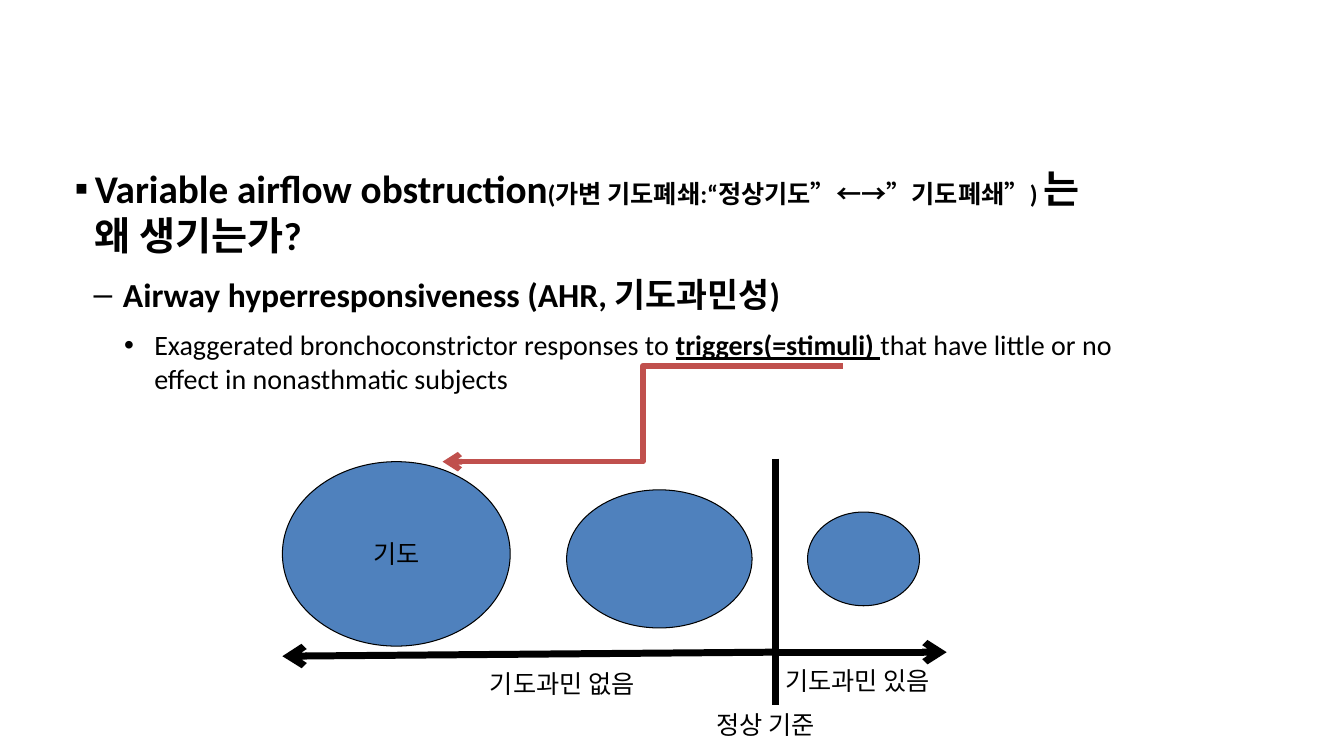
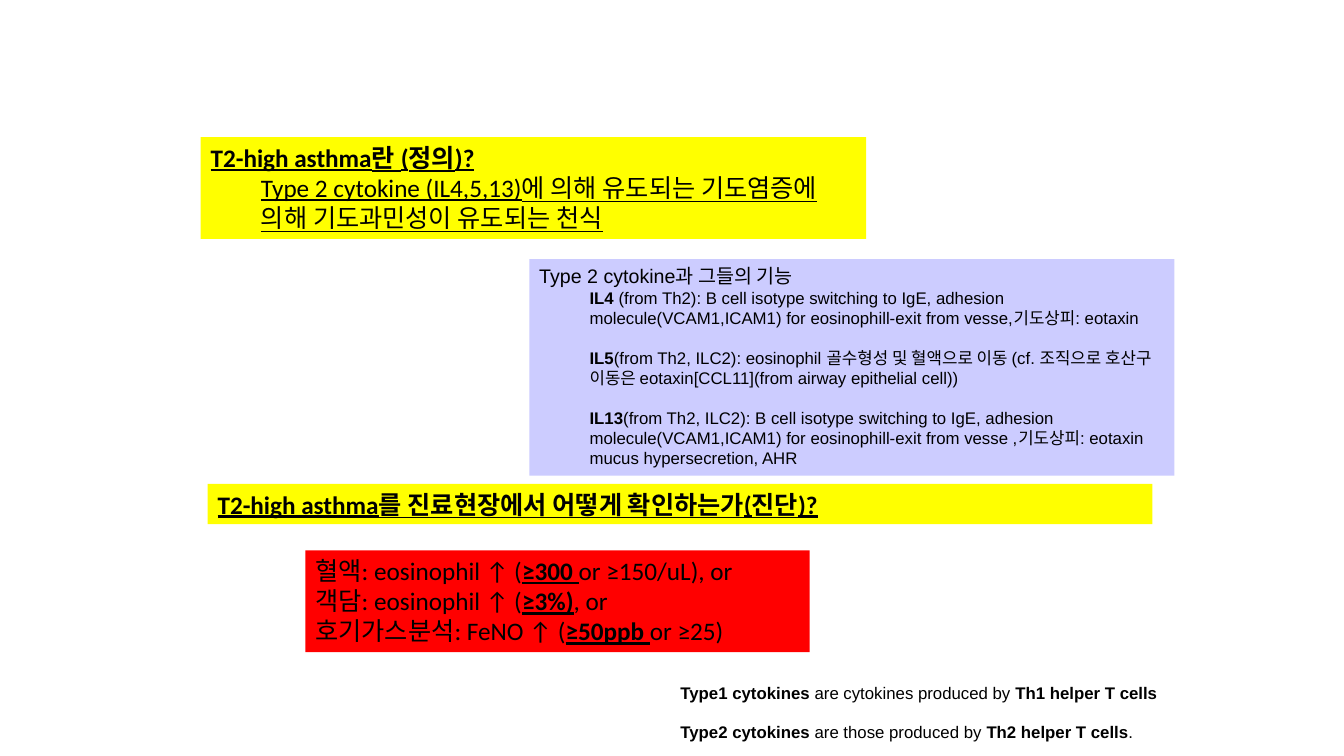
from collections import namedtuple
from itertools import cycle

from lxml import etree
from pptx import Presentation
from pptx import util as u
from pptx.dml.color import RGBColor
from pptx.enum import shapes, text
from pptx.oxml.ns import qn

BLACK, BLUE, RED_BROWN = "000000", "4F81BD", "C0504D"
YELLOW, LILAC, RED = "FFFF00", "CCCCFF", "FF0000"
SANS, HUMANIST = "Arial", "Calibri"
colour = RGBColor.from_string

# A run is a string, or (text, style letters b/u, optional size).
Line = namedtuple("Line", "size runs level indent hang marker before after",
                  defaults=(0, 0, 0, None, 0, 0))

deck = Presentation()
deck.slide_width, deck.slide_height = u.Inches(13.33), u.Inches(7.5)
COLUMN, ROW = deck.slide_width / 100, deck.slide_height / 100


def place(*shares):
    """Turn alternating x and y percentages of the slide into lengths."""
    return [round(share * unit) for share, unit in zip(shares, cycle((COLUMN, ROW)))]


def write(frame, font, lines):
    for number, line in enumerate(lines):
        para = frame.add_paragraph() if number else frame.paragraphs[0]
        para.level, para.alignment = line.level, text.PP_ALIGN.LEFT
        para.space_before, para.space_after = u.Pt(line.before), u.Pt(line.after)
        properties = para._p.get_or_add_pPr()
        properties.set("marL", str(u.Inches(line.indent)))
        properties.set("indent", str(u.Inches(-line.hang)))
        if line.marker:
            etree.SubElement(properties, qn("a:buFont")).set("typeface", SANS)
            etree.SubElement(properties, qn("a:buChar")).set("char", line.marker)
        para.font.name, para.font.size = font, u.Pt(line.size)
        para.font.color.rgb = colour(BLACK)
        for run in line.runs:
            words, style, *size = (run, "") if isinstance(run, str) else run
            span = para.add_run()
            span.text = words
            if "b" in style:
                span.font.bold = True
            if "u" in style:
                span.font.underline = True
            if size:
                span.font.size = u.Pt(size[0])


# Slide 1: airway hyperresponsiveness
page = deck.slides.add_slide(deck.slide_layouts[1])
title = page.shapes.title.element
title.getparent().remove(title)
body = page.placeholders[1]
body.left, body.top, body.width, body.height = place(5.55, 21.73, 77.27, 62.93)
frame = body.text_frame
frame.margin_left = frame.margin_top = frame.margin_right = frame.margin_bottom = 0
frame.auto_size = text.MSO_AUTO_SIZE.NONE
frame.vertical_anchor = text.MSO_ANCHOR.TOP
write(frame, HUMANIST, [
    Line(28, [("Variable airflow obstruction", "b"),
              ("(가변 기도폐쇄:“정상기도”←→”기도폐쇄”) ", "b", 18),
              ("는 왜 생기는가?", "b")], 0, 0.2, 0.2, "▪", after=11.2),
    Line(24, [("Airway hyperresponsiveness (AHR, 기도과민성)", "b")],
         1, 0.48, 0.29, "–", after=9.6),
    Line(20, ["Exaggerated bronchoconstrictor responses to ",
              ("triggers(=stimuli) ", "bu"),
              "that have little or no effect in nonasthmatic subjects"],
         2, 0.79, 0.3, "•", after=8),
])

for area, label in [((21.01, 61.07, 16.95, 24.4), "기도"),
                    ((42.16, 64.8, 13.8, 18.27), ""),
                    ((60.09, 67.73, 8.33, 12.4), "")]:
    airway = page.shapes.add_shape(shapes.MSO_SHAPE.OVAL, *place(*area))
    airway.shadow.inherit = False
    airway.fill.solid()
    airway.fill.fore_color.rgb = colour(BLUE)
    airway.line.color.rgb = colour(BLACK)
    airway.line.width = u.Pt(0.75)
    if label:
        airway.text_frame.word_wrap = False
        write(airway.text_frame, SANS, [Line(18, [label])])
        airway.text_frame.paragraphs[0].alignment = text.PP_ALIGN.CENTER

STRAIGHT, ELBOW = shapes.MSO_CONNECTOR.STRAIGHT, shapes.MSO_CONNECTOR.ELBOW
for kind, ends, ink, weight, arrow in [
    (STRAIGHT, (57.69, 60.67, 57.69, 93.2), BLACK, 5, False),
    (STRAIGHT, (57.46, 86.27, 21.01, 86.8), BLACK, 5, True),
    (STRAIGHT, (57.91, 86.27, 70.44, 86.27), BLACK, 5, True),
    (ELBOW, (62.72, 48.4, 32.93, 61.07), RED_BROWN, 4, True),
]:
    connector = page.shapes.add_connector(kind, *place(*ends))
    connector.line.color.rgb = colour(ink)
    connector.line.width = u.Pt(weight)
    if arrow:
        etree.SubElement(connector.line._get_or_add_ln(), qn("a:tailEnd")).set("type", "arrow")
    etree.SubElement(connector._element.spPr, qn("a:effectLst"))

for area, label in [((52.59, 93.2, 9.6, 5.33), "정상 기준"),
                    ((35.71, 87.73, 13.43, 5.33), "기도과민 없음"),
                    ((57.69, 87.33, 13.43, 5.33), "기도과민 있음")]:
    frame = page.shapes.add_textbox(*place(*area)).text_frame
    frame.word_wrap = False
    frame.auto_size = text.MSO_AUTO_SIZE.SHAPE_TO_FIT_TEXT
    write(frame, SANS, [Line(18, [label])])

# Slide 2: T2-high asthma
page = deck.slides.add_slide(deck.slide_layouts[6])
for area, fill, font, lines in [
    ((49.89, 89.6, 37.51, 9.47), None, SANS, [
        Line(12, [("Type1 cytokines", "b"), " are cytokines produced by ",
                  ("Th1 helper T cells", "b")]),
        Line(12, [("Type2 cytokines", "b"), " are those produced by ",
                  ("Th2 helper T cells", "b"), "."], before=14),
    ]),
    ((14.93, 18.13, 49.51, 13.47), YELLOW, HUMANIST, [
        Line(18, [("T2-high asthma란 (정의)?", "bu")]),
        Line(18, [("Type 2 cytokine (IL4,5,13)에 의해 유도되는 기도염증에 의해 "
                   "기도과민성이 유도되는 천식", "u")], 1, 0.5),
    ]),
    ((15.45, 64, 70.29, 5.33), YELLOW, HUMANIST, [
        Line(18, [("T2-high asthma를 진료현장에서 어떻게 확인하는가(진단)?", "bu")]),
    ]),
    ((39.38, 34.27, 48.01, 28.67), LILAC, SANS, [
        Line(14, ["Type 2 cytokine과 그들의 기능"]),
        Line(12, [("IL4", "b"),
                  " (from Th2): B cell isotype switching to IgE, adhesion "
                  "molecule(VCAM1,ICAM1) for eosinophill-exit from vesse,"
                  "기도상피: eotaxin"], 1, 0.5),
        Line(12, [("IL5", "b"),
                  "(from Th2, ILC2): eosinophil 골수형성 및 혈액으로 이동 (cf. 조직으로 "
                  "호산구 이동은 eotaxin[CCL11](from airway epithelial cell))"],
             1, 0.5, before=14),
        Line(12, [("IL13", "b"),
                  "(from Th2, ILC2): B cell isotype switching to IgE, adhesion "
                  "molecule(VCAM1,ICAM1) for eosinophill-exit from vesse ,"
                  "기도상피: eotaxin"], 1, 0.5, before=14),
        Line(12, ["mucus hypersecretion, AHR"], 1, 0.5),
    ]),
    ((22.73, 72.8, 37.51, 13.47), RED, HUMANIST, [
        Line(18, ["혈액: eosinophil ↑ (", ("≥300 ", "bu"), "or ≥150/uL), or"]),
        Line(18, ["객담: eosinophil ↑ (", ("≥3%)", "bu"), ", or"]),
        Line(18, ["호기가스분석: FeNO ↑ (", ("≥50ppb ", "bu"), "or ≥25)"]),
    ]),
]:
    if fill:
        box = page.shapes.add_shape(shapes.MSO_SHAPE.RECTANGLE, *place(*area))
        box.shadow.inherit = False
        box.fill.solid()
        box.fill.fore_color.rgb = colour(fill)
        box.line.fill.background()
    else:
        box = page.shapes.add_textbox(*place(*area))
    frame = box.text_frame
    frame.word_wrap = True
    frame.vertical_anchor = text.MSO_ANCHOR.TOP
    frame.auto_size = text.MSO_AUTO_SIZE.SHAPE_TO_FIT_TEXT
    write(frame, font, lines)

deck.save("out.pptx")
